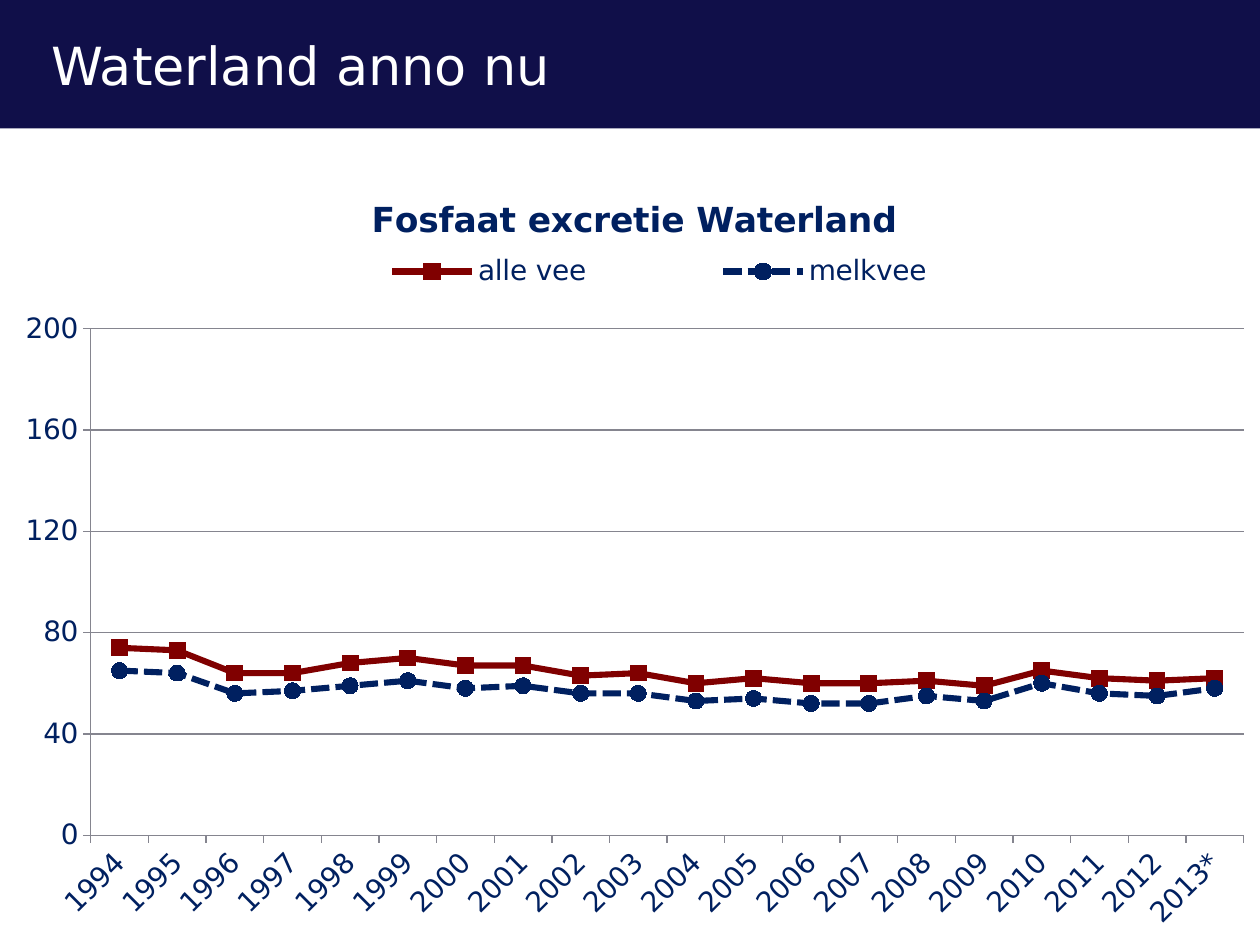
from dataclasses import dataclass

from lxml import etree
from pptx import Presentation
from pptx import util as u
from pptx.chart.data import CategoryChartData
from pptx.dml.color import RGBColor
from pptx.enum import chart as charts, dml, shapes, text
from pptx.oxml import ns


@dataclass(frozen=True)
class Theme:
    face: str = "DejaVu Sans"
    band: str = "100F49"
    white: str = "FFFFFF"
    navy: str = "002060"
    maroon: str = "800000"
    grid: str = "85858F"
    heading: int = 30
    chart_title: float = 19.7
    label: int = 16
    line: float = 3.5
    marker: int = 9


THEME = Theme()
YEARS = [str(year) for year in range(1994, 2013)] + ["2013*"]
ALL_CATTLE = [74, 73, 64, 64, 68, 70, 67, 67, 63, 64, 60, 62, 60, 60, 61, 59, 65, 62, 61, 62]
DAIRY_CATTLE = [65, 64, 56, 57, 59, 61, 58, 59, 56, 56, 53, 54, 52, 52, 55, 53, 60, 56, 55, 58]
SERIES = [
    ("alle vee", ALL_CATTLE, THEME.maroon, charts.XL_MARKER_STYLE.SQUARE, dml.MSO_LINE.SOLID),
    ("melkvee", DAIRY_CATTLE, THEME.navy, charts.XL_MARKER_STYLE.CIRCLE, dml.MSO_LINE.SQUARE_DOT),
]


def apply(target, formats):
    for name, value in formats.items():
        setattr(target, name, value)


def style_font(font, size, color, bold=False):
    apply(font, {"name": THEME.face, "size": u.Pt(size), "bold": bold})
    font.color.rgb = RGBColor.from_string(color)


def paint(fill, color):
    fill.solid()
    fill.fore_color.rgb = RGBColor.from_string(color)


def place_part(element, index, frame, **lengths):
    for old in element.findall(ns.qn("c:layout")):
        element.remove(old)
    layout = etree.Element(ns.qn("c:layout"))
    manual = etree.SubElement(layout, ns.qn("c:manualLayout"))
    settings = {"xMode": "edge", "yMode": "edge"}
    if element.tag == ns.qn("c:plotArea"):
        settings = {"layoutTarget": "inner", **settings}
    for name, length in lengths.items():
        whole = frame.width if name in ("x", "w") else frame.height
        settings[name] = u.Inches(length) / whole
    for name, value in settings.items():
        etree.SubElement(manual, ns.qn(f"c:{name}")).set("val", str(value))
    element.insert(index, layout)


def add_header(page, left, top, width, height):
    band = page.shapes.add_shape(shapes.MSO_SHAPE.RECTANGLE, left, top, width, height)
    band.shadow.inherit = False
    paint(band.fill, THEME.band)
    band.line.fill.background()
    box = page.shapes.add_textbox(
        left + u.Inches(0.31), top + u.Inches(0.11), width - u.Inches(0.46), u.Inches(0.8)
    )
    frame = box.text_frame
    apply(frame, {"word_wrap": True, "vertical_anchor": text.MSO_ANCHOR.MIDDLE})
    span = frame.paragraphs[0].add_run()
    span.text = "Waterland anno nu"
    style_font(span.font, THEME.heading, THEME.white)


def style_axes(chart):
    value_axis, year_axis = chart.value_axis, chart.category_axis
    apply(value_axis, {"minimum_scale": 0, "maximum_scale": 200, "major_unit": 40,
                       "has_major_gridlines": True})
    apply(value_axis.tick_labels, {"number_format": "0", "number_format_is_linked": False})
    for axis in (value_axis, year_axis):
        apply(axis, {"major_tick_mark": charts.XL_TICK_MARK.OUTSIDE,
                     "minor_tick_mark": charts.XL_TICK_MARK.NONE})
        style_font(axis.tick_labels.font, THEME.label, THEME.navy)
    for line in (value_axis.format.line, year_axis.format.line,
                 value_axis.major_gridlines.format.line):
        line.width = u.Pt(0.75)
        paint(line.fill, THEME.grid)
    year_axis._element.find(ns.qn("c:txPr")).find(ns.qn("a:bodyPr")).set("rot", "-2700000")


def style_series(plot):
    plot.vary_by_categories = False
    for series, (_, _, color, marker, dash) in zip(plot.series, SERIES):
        series.smooth = False
        line = series.format.line
        paint(line.fill, color)
        apply(line, {"width": u.Pt(THEME.line), "dash_style": dash})
        apply(series.marker, {"style": marker, "size": THEME.marker})
        paint(series.marker.format.fill, color)
        paint(series.marker.format.line.fill, color)


def add_phosphate_chart(page, left, top, width, height):
    data = CategoryChartData(number_format="0")
    data.categories = YEARS
    for name, values, *_ in SERIES:
        data.add_series(name, values)
    frame = page.shapes.add_chart(
        charts.XL_CHART_TYPE.LINE_MARKERS, left, top, width, height, data
    )
    chart = frame.chart
    style_font(chart.font, THEME.label, THEME.navy)
    apply(chart, {"has_title": True, "has_legend": True})
    span = chart.chart_title.text_frame.paragraphs[0].add_run()
    span.text = "Fosfaat excretie Waterland"
    style_font(span.font, THEME.chart_title, THEME.navy, bold=True)
    apply(chart.legend, {"position": charts.XL_LEGEND_POSITION.TOP, "include_in_layout": False})
    style_font(chart.legend.font, THEME.label, THEME.navy)
    style_axes(chart)
    style_series(chart.plots[0])
    place_part(chart.chart_title._element, 1, frame, x=2.9, y=0.15)
    place_part(chart.legend._element, 1, frame, x=2.1, y=0.61, w=6.27, h=0.37)
    plot_area = chart._chartSpace.chart.plotArea
    place_part(plot_area, 0, frame, x=0.72, y=1.25, w=9.15, h=4.02)


def main():
    deck = Presentation()
    apply(deck, {"slide_width": u.Inches(10), "slide_height": u.Inches(7.5)})
    page = deck.slides.add_slide(deck.slide_layouts[6])
    add_header(page, 0, 0, deck.slide_width, u.Inches(1.02))
    add_phosphate_chart(page, 0, u.Inches(1.36), u.Inches(10.07), u.Inches(6.14))
    deck.save("out.pptx")


if __name__ == "__main__":
    main()
